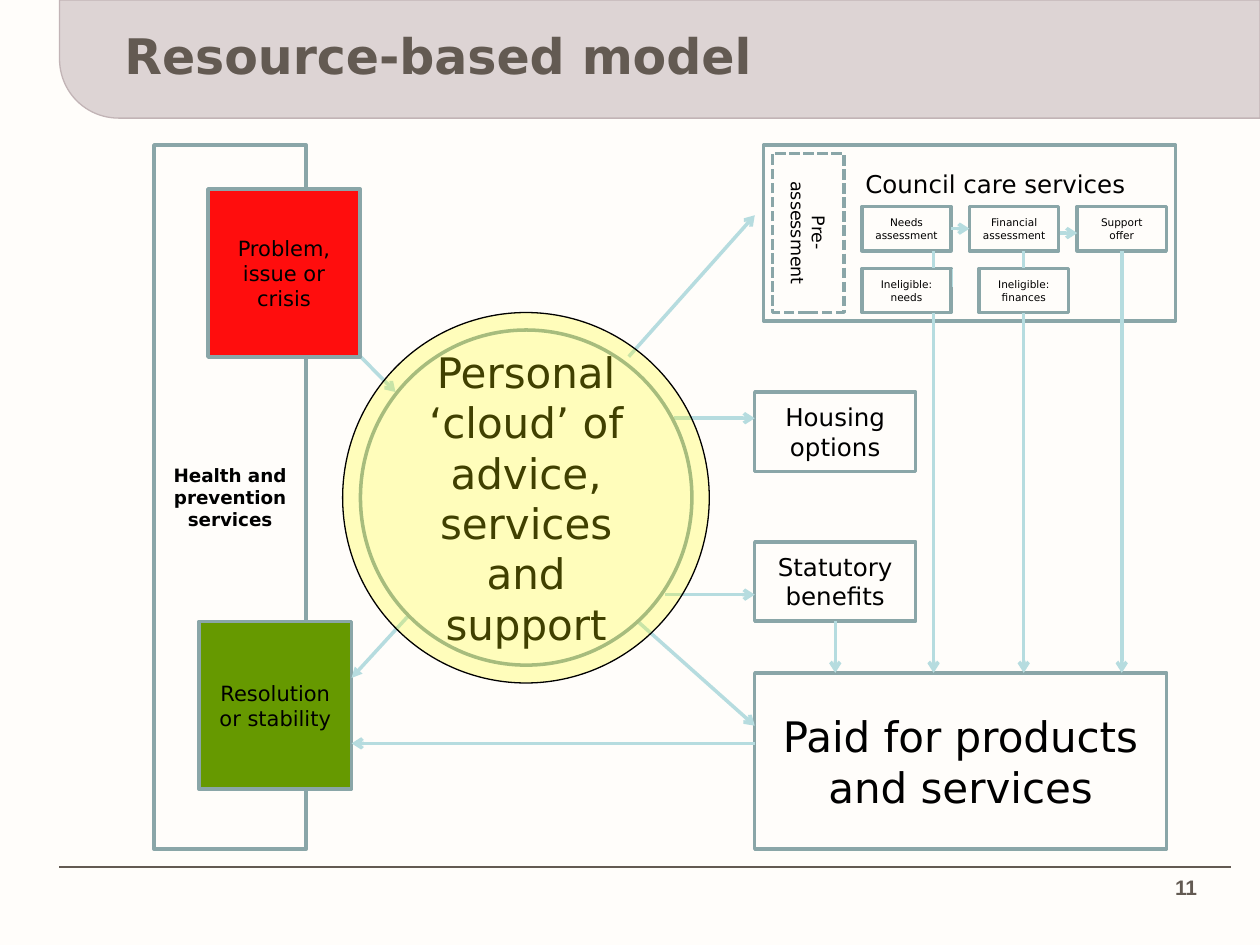
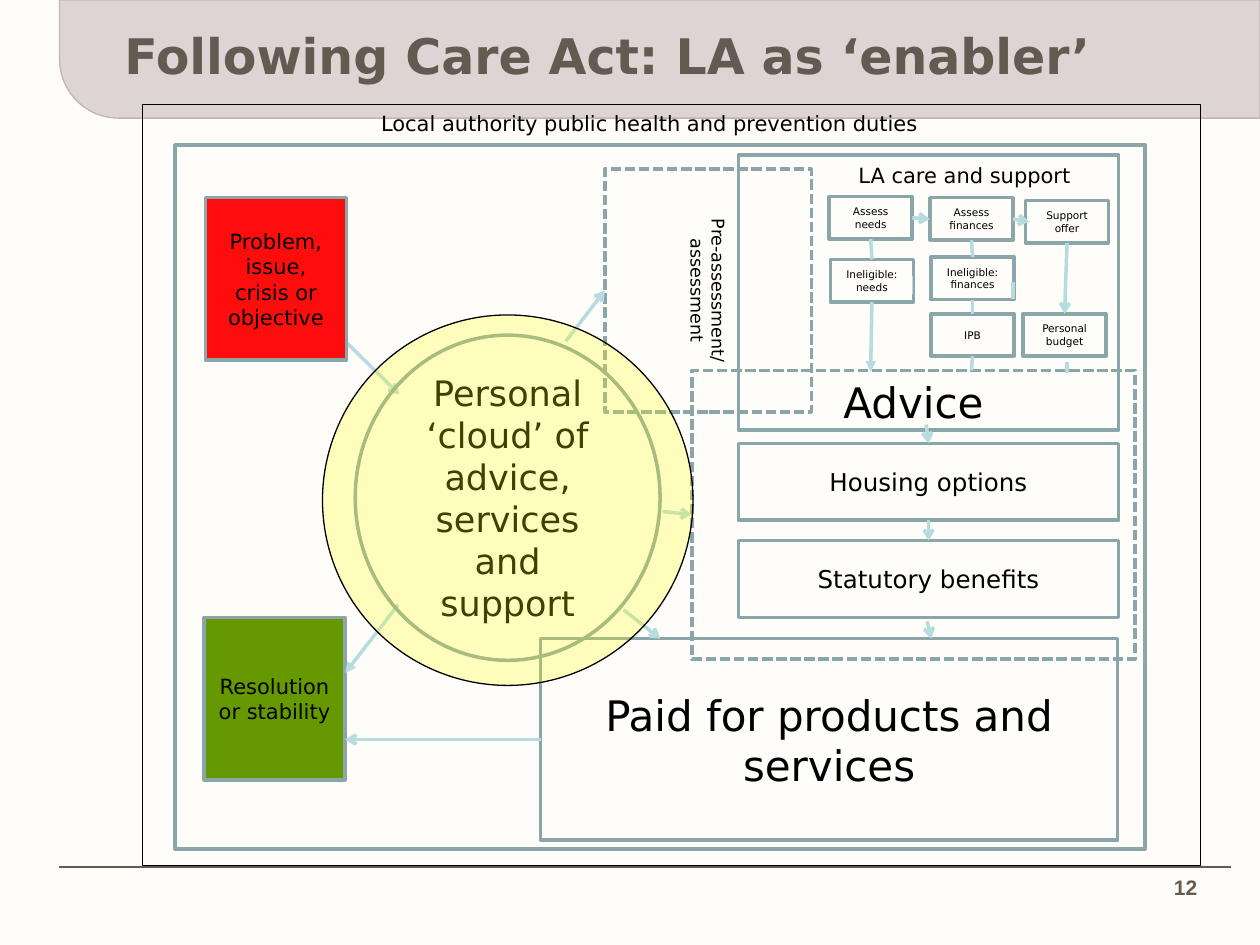
from math import hypot

from lxml.etree import SubElement
from pptx import Presentation
from pptx.dml.color import RGBColor
from pptx.enum.dml import MSO_LINE
from pptx.enum.shapes import MSO_CONNECTOR, MSO_SHAPE
from pptx.enum.text import MSO_ANCHOR, PP_ALIGN
from pptx.oxml.ns import qn
from pptx.util import Pt

PAPER, BAND, TAUPE = "FFFDFA", "C2B4B6", "635A52"
OUTLINE, FLOW, BLACK = "8AA6A8", "B6DCDF", "000000"
RED, GREEN, YELLOW = "FF0D0D", "669900", "FFFF00"
BODY_FONT, NUMBER_FONT = "DejaVu Sans", "Arial"
JOIN_REACH = 2
CLOUD_TEXT = "Personal ‘cloud’ of advice, services and support"


def colour(hex_string):
    return RGBColor.from_string(hex_string)


class Diagram:
    def __init__(self, deck):
        self.deck = deck

    def start(self, title, number):
        self.slide = self.deck.slides.add_slide(self.deck.slide_layouts[6])
        self.boxes, self.flows = [], []
        background = self.slide.background.fill
        background.solid()
        background.fore_color.rgb = colour(PAPER)
        band = self.shape(MSO_SHAPE.ROUND_1_RECTANGLE, (34, 0, 686, 67.5),
                          fill=BAND, opacity=55, line=BAND, weight=0.75)
        band.adjustments[0] = 0.5
        band.rotation = 180
        self.flow((34, 495.3), (703.5, 495.3), head=None, ink=TAUPE, weight=1.25)
        self.label(title, (64, 11.5, 612, 39.6), 28, PP_ALIGN.LEFT,
                   ink=TAUPE, bold=True, anchor=MSO_ANCHOR.MIDDLE)
        self.label(str(number), (658, 495.3, 33.2, 23.8), 12, PP_ALIGN.RIGHT,
                   ink=TAUPE, bold=True, anchor=MSO_ANCHOR.MIDDLE, font=NUMBER_FONT)

    def set_text(self, shape, text, size, align=PP_ALIGN.CENTER, ink=BLACK,
                 bold=False, anchor=MSO_ANCHOR.MIDDLE, font=BODY_FONT):
        frame = shape.text_frame
        frame.text = text
        frame.word_wrap = True
        frame.vertical_anchor = anchor
        for paragraph in frame.paragraphs:
            paragraph.alignment = align
            for run in paragraph.runs:
                run.font.size = Pt(size)
                run.font.name = font
                run.font.bold = bold
                run.font.color.rgb = colour(ink)

    def label(self, text, place, size, align, anchor=MSO_ANCHOR.TOP, **style):
        holder = self.slide.shapes.add_textbox(*map(Pt, place))
        self.set_text(holder, text, size, align, anchor=anchor, **style)

    def shape(self, kind, place, fill=None, opacity=100, line=OUTLINE, weight=2):
        shape = self.slide.shapes.add_shape(kind, *map(Pt, place))
        shape.shadow.inherit = False
        shape.line.color.rgb = colour(line)
        shape.line.width = Pt(weight)
        if fill is None:
            shape.fill.background()
        else:
            shape.fill.solid()
            shape.fill.fore_color.rgb = colour(fill)
            if opacity < 100:
                tint = shape._element.spPr.find(qn("a:solidFill"))[0]
                SubElement(tint, qn("a:alpha"), val=str(opacity * 1000))
        return shape

    def box(self, text, place, size=6, dashed=False, vertical=False,
            bold=False, anchor=MSO_ANCHOR.MIDDLE, **look):
        box = self.shape(MSO_SHAPE.RECTANGLE, place, **look)
        if text:
            self.set_text(box, text, size, bold=bold, anchor=anchor)
        if dashed:
            box.line.dash_style = MSO_LINE.SQUARE_DOT
        if vertical:
            box.text_frame._txBody.bodyPr.set("vert", "vert")
        self.boxes.append(box)

    def cloud(self, place, size, halo):
        core = self.shape(MSO_SHAPE.OVAL, place)
        self.set_text(core, CLOUD_TEXT, size)
        self.shape(MSO_SHAPE.OVAL, halo, fill=YELLOW, opacity=25,
                   line=BLACK, weight=0.75)

    def flow(self, start, end, head="arrow", ink=FLOW, weight=2):
        flow = self.slide.shapes.add_connector(
            MSO_CONNECTOR.STRAIGHT, *map(Pt, start + end))
        flow.line.color.rgb = colour(ink)
        flow.line.width = Pt(weight)
        properties = flow._element.spPr
        if head:
            SubElement(properties.find(qn("a:ln")), qn("a:tailEnd"), type=head)
        SubElement(properties, qn("a:effectLst"))
        self.flows.append(flow)

    def nearest_side(self, x, y):
        sides = []
        for box in self.boxes:
            middle_x, middle_y = box.left + box.width // 2, box.top + box.height // 2
            middles = ((middle_x, box.top), (box.left, middle_y),
                       (middle_x, box.top + box.height),
                       (box.left + box.width, middle_y))
            sides += [(hypot(x - side_x, y - side_y), box, side)
                      for side, (side_x, side_y) in enumerate(middles)]
        distance, box, side = min(sides, key=lambda candidate: candidate[0])
        return (box, side) if distance <= Pt(JOIN_REACH) else None

    def join_flows(self):
        for flow in self.flows:
            source = self.nearest_side(flow.begin_x, flow.begin_y)
            target = self.nearest_side(flow.end_x, flow.end_y)
            if source:
                flow.begin_connect(*source)
            if target:
                flow.end_connect(*target)


def resource_model(diagram):
    diagram.start("Resource-based model", 11)
    diagram.box("Health and prevention services", (88, 82.8, 87, 402.5), 10.5, bold=True)
    diagram.box("Resolution or stability", (113.8, 355, 87, 96), 12, fill=GREEN)
    for option, top in (("Housing options", 224), ("Statutory benefits", 309.6)):
        diagram.box(option, (431.3, top, 92, 45.4), 14)
    diagram.box("Paid for products and services", (431.3, 384.5, 235.4, 100.8), 24)
    diagram.box("", (436.3, 82.8, 235.4, 100.8))
    diagram.box("Pre-assessment", (441.4, 87.8, 41, 90.7), 10, dashed=True, vertical=True)
    diagram.label("Council care services", (487.4, 92.9, 174, 24.5), 14, PP_ALIGN.LEFT)
    steps = ("Needs assessment", "Financial assessment", "Support offer")
    for column, step in enumerate(steps):
        diagram.box(step, (492.5 + 61.5 * column, 118, 51, 25.3))
    for outcome, left in (("Ineligible: needs", 492.5), ("Ineligible: finances", 559.5)):
        diagram.box(outcome, (left, 153.4, 51, 25.2))

    for x, top in ((641, 143.3), (585, 178.6), (533.5, 178.6)):
        diagram.flow((x, top), (x, 384.5))
    for x in (533.5, 585):
        diagram.flow((x, 143.3), (x, 153.4), head=None)
    diagram.flow((544.3, 154), (544.3, 164), head=None, weight=0.75)
    for start, end in (
        ((206, 203.8), (226, 224)),
        ((364.3, 355), (431.3, 414.7)),
        ((359.3, 203.8), (431.3, 123)),
        ((431.3, 424.8), (200.9, 424.8)),
        ((543.5, 130.7), (554, 130.7)),
        ((605.5, 133.2), (615.6, 133.2)),
        ((385.2, 239), (431.3, 239)),
        ((380.2, 339.8), (431.3, 339.8)),
        ((477.3, 355), (477.3, 384.5)),
    ):
        diagram.flow(start, end)
    diagram.flow((233.3, 352), (200.9, 387.4), head="triangle")
    diagram.box("Problem, issue or crisis", (118.8, 108, 87, 96), 12, fill=RED)
    diagram.cloud((206, 188.6, 189.4, 191.5), 24, (195.8, 178.6, 209.5, 211.7))
    diagram.join_flows()


def enabler_model(diagram):
    diagram.start("Following Care Act: LA as ‘enabler’", 12)
    diagram.box("", (100, 82.8, 554.4, 402.5))
    diagram.box("Resolution or stability", (116.6, 352.8, 80.6, 92.9), 12, fill=GREEN)
    for option, top in (("Housing options", 253.4), ("Statutory benefits", 308.9)):
        diagram.box(option, (421.9, top, 217.4, 43.9), 14)
    diagram.box("Paid for products and services", (308.9, 365, 329.8, 115.2), 24)
    diagram.box("", (421.9, 88.6, 217.4, 157))
    for step, left, top in (
        ("Assess needs", 473.8, 112.3),
        ("Assess finances", 531.4, 113),
        ("Support offer", 586, 114.5),
        ("Ineligible: needs", 474.5, 148.3),
        ("Ineligible: finances", 532, 146.9),
        ("IPB", 532, 179.3),
        ("Personal budget", 584.6, 179.3),
    ):
        diagram.box(step, (left, top, 47.5, 24.3))
    diagram.box("Pre-assessment/\nassessment", (345.6, 96.5, 118, 139), 10,
                dashed=True, vertical=True)
    diagram.box("Advice", (395.3, 211.7, 253.4, 164.9), 24, dashed=True,
                anchor=MSO_ANCHOR.TOP)
    for heading, place in (
        ("Local authority public health and prevention duties", (178.6, 59.8, 385.2, 21.6)),
        ("LA care and support", (470.9, 89.3, 160.6, 21.6)),
    ):
        diagram.label(heading, place, 12, PP_ALIGN.CENTER)

    for start, end in (
        ((197.3, 195.1), (228.2, 225.4)),
        ((356.4, 348.5), (377.3, 365)),
        ((529.9, 355), (532.1, 365)),
        ((323.3, 195.1), (345.6, 166)),
        ((308.9, 422.6), (197.3, 422.6)),
        ((521.3, 124.5), (531.4, 125.2)),
        ((578.2, 126.7), (588.2, 126.7)),
        ((378.7, 292.3), (395.3, 294.1)),
        ((530.6, 297.3), (530.6, 308.9)),
        ((609.8, 138.8), (608.4, 179.3)),
        ((529.2, 242.6), (530.6, 253.4)),
    ):
        diagram.flow(start, end)
    for start, end in (
        ((497.5, 136.6), (498.2, 148.3)),
        ((555.1, 137.3), (555.8, 146.9)),
        ((555.8, 171.2), (555.8, 179.3)),
        ((578.9, 161.3), (578.9, 170.6)),
        ((555.1, 205.2), (555.1, 211.7)),
        ((609.8, 206.6), (609.8, 213)),
    ):
        diagram.flow(start, end, head=None)
    diagram.flow((521.3, 157.7), (521.3, 167.8), head=None, weight=0.75)
    for start, end in (((227.5, 345.6), (197.3, 384.5)), ((498.2, 172.6), (497.5, 212.4))):
        diagram.flow(start, end, head="triangle")
    diagram.box("Problem, issue, crisis or objective", (117.4, 113, 80.6, 92.9), 12, fill=RED)
    diagram.box("", (81.4, 59.8, 604.8, 434.9), line=BLACK, weight=0.75)
    diagram.cloud((203, 191.5, 174.2, 185.8), 20, (184.3, 180, 211.7, 211.7))
    diagram.join_flows()


def main():
    deck = Presentation()
    deck.slide_width, deck.slide_height = Pt(720), Pt(540)
    diagram = Diagram(deck)
    resource_model(diagram)
    enabler_model(diagram)
    deck.save("out.pptx")


if __name__ == "__main__":
    main()
